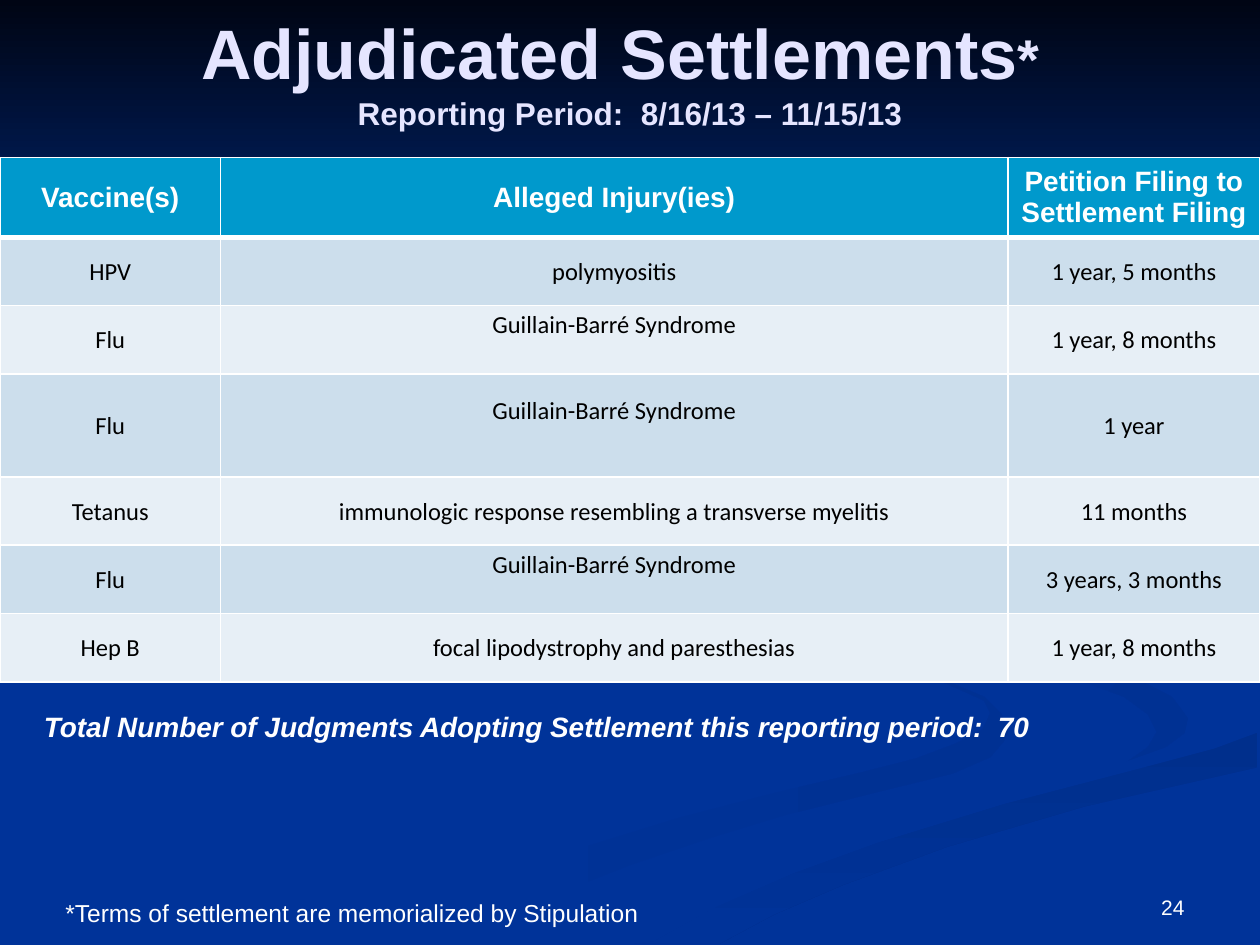
import pptx
import pptx.util
import pptx.dml.color
import pptx.enum.shapes
import pptx.enum.text
import pptx.oxml
import pptx.oxml.ns
from lxml import etree

ANCHOR = pptx.enum.text.MSO_ANCHOR
ALIGN = pptx.enum.text.PP_ALIGN
inches = pptx.util.Inches

# Content
WIDTH, HEIGHT = 10, 7.5
COLORS = {
    "page": "003399", "night": "000514", "swirl": "003193", "band": "002F8C",
    "title": "E5E5FF", "white": "FFFFFF", "black": "000000",
    "header": "0099CC", "odd": "CCDEEC", "even": "E7EFF6",
}
TITLE = [
    [("Adjudicated Settlements", 40), ("*", 32), (" ", 40)],
    [("Reporting Period:  8/16/13 – 11/15/13", 18)],
]
HEADER = ["Vaccine(s)", "Alleged Injury(ies)", "Petition Filing to Settlement Filing"]
SYNDROME = "Guillain-Barré Syndrome"
CASES = [
    ("HPV", "polymyositis", "1 year, 5 months"),
    ("Flu", SYNDROME, "1 year, 8 months"),
    ("Flu", SYNDROME, "1 year"),
    ("Tetanus", "immunologic response resembling a transverse myelitis", "11 months"),
    ("Flu", SYNDROME, "3 years, 3 months"),
    ("Hep B", "focal lipodystrophy and paresthesias", "1 year, 8 months"),
]
TOTAL = "Total Number of Judgments Adopting Settlement this reporting period:  70"
FOOTNOTE = "*Terms of settlement are memorialized by Stipulation"
PAGE_NUMBER = "24"

COLUMN_SHARES = [0.175, 0.625, 0.2]
TABLE_TOP, TABLE_HEIGHT, HEADER_HEIGHT = HEIGHT / 6, 4.16, 0.63
ROW_SHARES = [1, 1, 1.5, 1, 1, 1]
ROW = (TABLE_HEIGHT - HEADER_HEIGHT) / sum(ROW_SHARES)
ROW_HEIGHTS = [HEADER_HEIGHT] + [share * ROW for share in ROW_SHARES]
LINE = 0.24  # one line of table text

# Background ribbons: outline, first colour, last colour, clockwise angle
RIBBONS = [
    ([(7.81, 5.53), (7.45, 5.38), (6.82, 5.19), (6.26, 5.02), (5.94, 4.85), (5.75, 4.59),
      (5.7, 4.72), (5.86, 4.87), (6.31, 5.05), (6.97, 5.25), (7.52, 5.43), (7.81, 5.56),
      (7.86, 5.66), (7.8, 5.79), (7.59, 5.9), (7.27, 6.02), (6.84, 6.13), (6.16, 6.29),
      (5.39, 6.49), (4.58, 6.74), (3.76, 7.07), (3, 7.49), (3.61, 7.49), (4.31, 7.14),
      (4.99, 6.87), (5.64, 6.65), (6.23, 6.47), (6.99, 6.28), (7.56, 6.14), (7.86, 6.01),
      (7.97, 5.88), (8, 5.81), (7.95, 5.67)], "page", "swirl", 0),
    ([(9.43, 5.7), (9.3, 5.53), (9.05, 5.4), (8.5, 5.24), (7.92, 5.09), (7.45, 4.9),
      (7.24, 4.64), (7.3, 4.84), (7.55, 5.05), (7.97, 5.24), (8.54, 5.39), (8.92, 5.53),
      (9.11, 5.67), (9.18, 5.81), (9.11, 5.93), (8.94, 6.05), (9.25, 5.93), (9.41, 5.81)],
     "page", "swirl", 45),
    ([(5.19, 7.47), (5.03, 7.49), (5.71, 7.49), (6.14, 7.26), (6.7, 7.02), (7.52, 6.72),
      (8.61, 6.4), (9.98, 6.09), (9.98, 5.81), (9.63, 5.94), (9.03, 6.1), (7.97, 6.38),
      (6.96, 6.69), (6.3, 6.93), (5.69, 7.19)], "band", "page", 90),
    ([(7.25, 4.64), (7.45, 4.9), (7.93, 5.09), (8.51, 5.24), (9.05, 5.4), (9.31, 5.53),
      (9.43, 5.7), (9.4, 5.83), (9.26, 5.93), (8.92, 6.05), (8.43, 6.18), (7.8, 6.34),
      (7.04, 6.55), (6.19, 6.84), (5.26, 7.24), (4.77, 7.49), (5.03, 7.49), (5.19, 7.47),
      (5.7, 7.19), (6.3, 6.93), (6.96, 6.69), (7.97, 6.38), (9.04, 6.1), (9.64, 5.94),
      (9.99, 5.81), (9.99, 5.38), (9.41, 5.27), (8.66, 5.09), (8.17, 4.92), (7.86, 4.73),
      (7.82, 4.6), (8, 4.42), (8.35, 4.3), (8.99, 4.18), (9.68, 4.09), (9.99, 4.02),
      (9.99, 3.87), (9.42, 3.99), (8.74, 4.08), (8.08, 4.17), (7.55, 4.32), (7.3, 4.49)],
     "page", "page", 0),
]


def rgb(name):
    return pptx.dml.color.RGBColor.from_string(COLORS[name])


def style(span, size, color, name="Arial", bold=False, italic=False):
    font = span.font
    font.size, font.name = pptx.util.Pt(size), name
    font.bold, font.italic = bold, italic
    font.color.rgb = rgb(color)


def set_margins(area, left, top, right, bottom):
    area.margin_left, area.margin_top = inches(left), inches(top)
    area.margin_right, area.margin_bottom = inches(right), inches(bottom)


def add_text(page, place, text, size, anchor=ANCHOR.TOP, align=ALIGN.LEFT, **look):
    box = page.shapes.add_textbox(*map(inches, place))
    frame = box.text_frame
    frame.word_wrap, frame.vertical_anchor = True, anchor
    frame.text = text
    para = frame.paragraphs[0]
    para.alignment = align
    style(para.runs[0], size, "white", **look)


def paint(shape, first, last, angle):
    shape.shadow.inherit = False
    shape.line.fill.background()
    if first == last:
        shape.fill.solid()
        shape.fill.fore_color.rgb = rgb(first)
        return
    shape.fill.gradient()
    shape.fill.gradient_angle = (360 - angle) % 360
    for stop, color in zip(shape.fill.gradient_stops, (first, last)):
        stop.color.rgb = rgb(color)


def add_background(page):
    page.background.fill.solid()
    page.background.fill.fore_color.rgb = rgb("page")
    for outline, *look in RIBBONS:
        # The builder keeps whole units only, so draw in hundredths of an inch
        points = [(round(x * 100), round(y * 100)) for x, y in outline]
        builder = page.shapes.build_freeform(*points[0], scale=inches(0.01))
        builder.add_line_segments(points[1:], close=True)
        paint(builder.convert_to_shape(), *look)
    sky = page.shapes.add_shape(pptx.enum.shapes.MSO_SHAPE.RECTANGLE,
                                0, 0, inches(WIDTH), inches(3.08))
    paint(sky, "night", "page", 90)


def add_title(page):
    box = page.shapes.add_textbox(*map(inches, (0.5, 0.3, 9, 1.25)))
    frame = box.text_frame
    frame.word_wrap, frame.vertical_anchor = True, ANCHOR.MIDDLE
    set_margins(frame, 0.1, 0.05, 0.1, 0.78)
    for index, parts in enumerate(TITLE):
        para = frame.add_paragraph() if index else frame.paragraphs[0]
        para.alignment = ALIGN.CENTER
        for text, size in parts:
            span = para.add_run()
            span.text = text
            style(span, size, "title", bold=True)


def add_borders(cell, bottom):
    properties = cell._tc.get_or_add_tcPr()
    for index, (side, points) in enumerate(
            [("lnL", 1), ("lnR", 1), ("lnT", 1), ("lnB", bottom)]):
        line = etree.Element(pptx.oxml.ns.qn("a:" + side), w=str(pptx.util.Pt(points)))
        fill = etree.SubElement(line, pptx.oxml.ns.qn("a:solidFill"))
        etree.SubElement(fill, pptx.oxml.ns.qn("a:srgbClr"), val=COLORS["white"])
        properties.insert(index, line)


def add_cases(page):
    rows = [HEADER, *CASES]
    table = page.shapes.add_table(
        len(rows), len(HEADER), 0, inches(TABLE_TOP),
        inches(WIDTH), inches(TABLE_HEIGHT)).table
    for column, share in zip(table.columns, COLUMN_SHARES):
        column.width = inches(share * WIDTH)
    for r, texts in enumerate(rows):
        table.rows[r].height = inches(ROW_HEIGHTS[r])
        for c, text in enumerate(texts):
            cell = table.cell(r, c)
            cell.text = text
            cell.vertical_anchor = ANCHOR.MIDDLE
            para = cell.text_frame.paragraphs[0]
            para.alignment = ALIGN.CENTER
            cell.fill.solid()
            if r == 0:
                set_margins(cell, 0.1, 0.05, 0.1, 0.05)
                style(para.runs[0], 16, "white", bold=True)
                cell.fill.fore_color.rgb = rgb("header")
            else:
                # The syndrome sits half a line above the middle
                set_margins(cell, 0.01, 0.01, 0.01, LINE if text == SYNDROME else 0)
                style(para.runs[0], 14, "black", name="Calibri")
                cell.fill.fore_color.rgb = rgb("odd" if r % 2 else "even")
            add_borders(cell, 1 if r else 3)


def main():
    deck = pptx.Presentation()
    deck.slide_width, deck.slide_height = inches(WIDTH), inches(HEIGHT)
    page = deck.slides.add_slide(deck.slide_layouts[6])
    add_background(page)
    add_text(page, (7.17, 6.83, 2.33, 0.52), PAGE_NUMBER, 12, ANCHOR.BOTTOM, ALIGN.RIGHT)
    add_title(page)
    add_cases(page)
    add_text(page, (0.42, 7.08, 5.42, 0.34), FOOTNOTE, 14)
    add_text(page, (0.25, 5.58, 8.75, 0.37), TOTAL, 16, bold=True, italic=True)
    deck.save("out.pptx")


if __name__ == "__main__":
    main()
